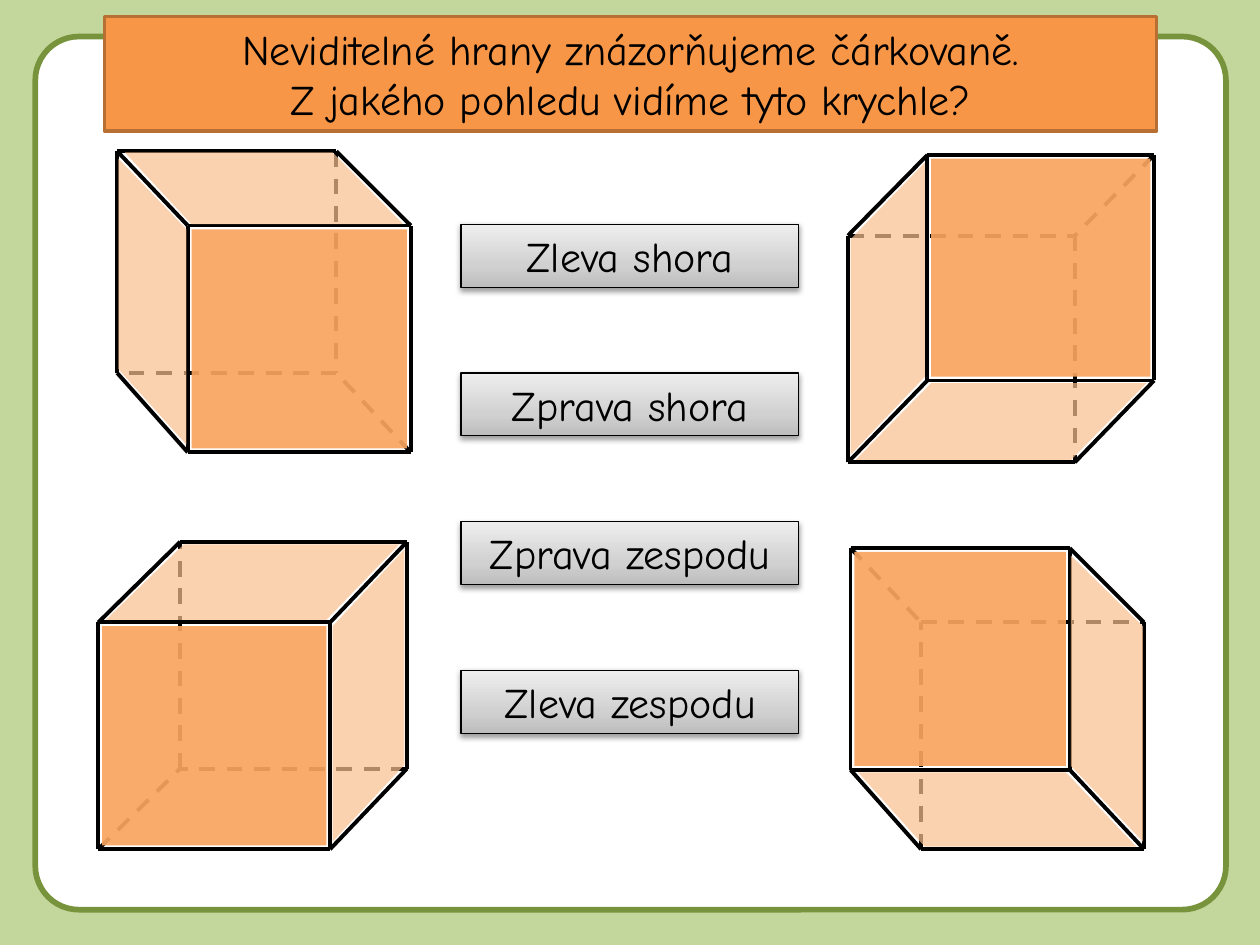
from copy import deepcopy

from lxml import etree
from pptx import Presentation
from pptx import util as u
from pptx.dml.color import RGBColor
from pptx.enum import dml, shapes, text
from pptx.oxml.ns import qn

PX = 9144
CUBES = [
    ((78, 494, 262, 674), (143, 430, 323, 610)),
    ((149, 179, 326, 359), (93, 120, 267, 296)),
    ((736, 123, 916, 302), (673, 187, 853, 367)),
    ((675, 435, 849, 611), (731, 494, 908, 674)),
]
ANSWERS = ["Zleva shora", "Zprava shora", "Zprava zespodu", "Zleva zespodu"]


def color(code):
    return RGBColor.from_string(code)


def corners(square):
    left, top, right, bottom = square
    return [(left, top), (right, top), (right, bottom), (left, bottom)]


def shrink(points, factor=0.95):
    center = [sum(axis) / len(points) for axis in zip(*points)]
    return [tuple(round(c + (v - c) * factor) for v, c in zip(point, center))
            for point in points]


class Painter:
    font = "Comic Neue"
    size = 24
    ink = "000000"
    edge = 2.25
    front = ("F8A45E", 92)
    side = ("FAC090", 71)
    grays = [(0, "BDBDBD"), (0.35, "D1D1D1"), (1, "EEEEEE")]

    def __init__(self, page):
        self.page = page

    def background(self, fill):
        self.page.background.fill.solid()
        self.page.background.fill.fore_color.rgb = color(fill)

    def paint(self, shape, fill, alpha=100):
        shape.shadow.inherit = False
        shape.fill.solid()
        shape.fill.fore_color.rgb = color(fill)
        if alpha < 100:
            tone = shape._element.spPr.find(".//" + qn("a:srgbClr"))
            etree.SubElement(tone, qn("a:alpha"), val=str(alpha * 1000))
        shape.line.fill.background()

    def outline(self, shape, line, width):
        shape.line.color.rgb = color(line)
        shape.line.width = u.Pt(width)

    def box(self, left, top, width, height, fill, alpha=100, kind="RECTANGLE"):
        box = self.page.shapes.add_shape(
            shapes.MSO_SHAPE[kind], *(v * PX for v in (left, top, width, height)))
        self.paint(box, fill, alpha)
        return box

    def label(self, box, lines):
        frame = box.text_frame
        frame.word_wrap = True
        frame.auto_size = text.MSO_AUTO_SIZE.SHAPE_TO_FIT_TEXT
        for index, line in enumerate(lines):
            para = frame.add_paragraph() if index else frame.paragraphs[0]
            para.alignment = text.PP_ALIGN.CENTER
            span = para.add_run()
            span.text = line
            span.font.name = self.font
            span.font.size = u.Pt(self.size)
            span.font.color.rgb = color(self.ink)

    def button(self, left, top, width, height, caption):
        box = self.box(left, top, width, height, "D1D1D1")
        self.outline(box, self.ink, 0.75)
        box.fill.gradient()
        box.fill.gradient_angle = 90
        stops = box._element.spPr.find(".//" + qn("a:gsLst"))
        stops.append(deepcopy(stops[0]))
        for stop, (position, gray) in zip(box.fill.gradient_stops, self.grays):
            stop.position = position
            stop.color.rgb = color(gray)
        effects = box._element.spPr.find(qn("a:effectLst"))
        shadow = etree.SubElement(effects, qn("a:outerShdw"), blurRad="40000",
                                  dist="20000", dir="5400000", rotWithShape="0")
        tone = etree.SubElement(shadow, qn("a:srgbClr"), val=self.ink)
        etree.SubElement(tone, qn("a:alpha"), val="38000")
        self.label(box, [caption])

    def line(self, group, start, end, dashed):
        line = group.shapes.add_connector(
            shapes.MSO_CONNECTOR.STRAIGHT, *(v * PX for v in start + end))
        self.outline(line, self.ink, self.edge)
        if dashed:
            line.line.dash_style = dml.MSO_LINE.DASH
        etree.SubElement(line._element.spPr, qn("a:effectLst"))

    def face(self, points):
        builder = self.page.shapes.build_freeform(*points[0], scale=PX)
        builder.add_line_segments(points[1:], close=True)
        self.paint(builder.convert_to_shape(), *self.side)

    def cube(self, front, back):
        near, far = corners(front), corners(back)
        inner_x = back[0] if back[0] > front[0] else back[2]
        inner_y = back[1] if back[1] > front[1] else back[3]
        hidden = (inner_x, inner_y)
        group = self.page.shapes.add_group_shape()
        sides = []
        for i in range(4):
            j = (i + 1) % 4
            for start, end in ((near[i], near[j]), (far[i], far[j]), (near[i], far[i])):
                self.line(group, start, end, hidden in (start, end))
            if hidden not in (far[i], far[j]):
                sides.append([near[i], near[j], far[j], far[i]])
        left, top, right, bottom = front
        self.box(left + 3, top + 3, right - left - 6, bottom - top - 6, *self.front)
        for side in sides:
            self.face(shrink(side))


def main():
    deck = Presentation()
    deck.slide_width, deck.slide_height = 1000 * PX, 750 * PX
    painter = Painter(deck.slides.add_slide(deck.slide_layouts[6]))
    painter.background("C3D69B")

    card = painter.box(28, 29, 945, 693, "FFFFFF", kind="ROUNDED_RECTANGLE")
    card.adjustments[0] = 0.05
    painter.outline(card, "77933C", 3.25)

    title = painter.box(83, 13, 835, 91, "F79646")
    painter.outline(title, "B76F34", 2)
    painter.label(title, ["Neviditelné hrany znázorňujeme čárkovaně.",
                          "Z jakého pohledu vidíme tyto krychle?"])

    for front, back in CUBES:
        painter.cube(front, back)
    for row, answer in enumerate(ANSWERS):
        painter.button(366, 178 + row * 118, 268, 50, answer)

    deck.save("out.pptx")


if __name__ == "__main__":
    main()
